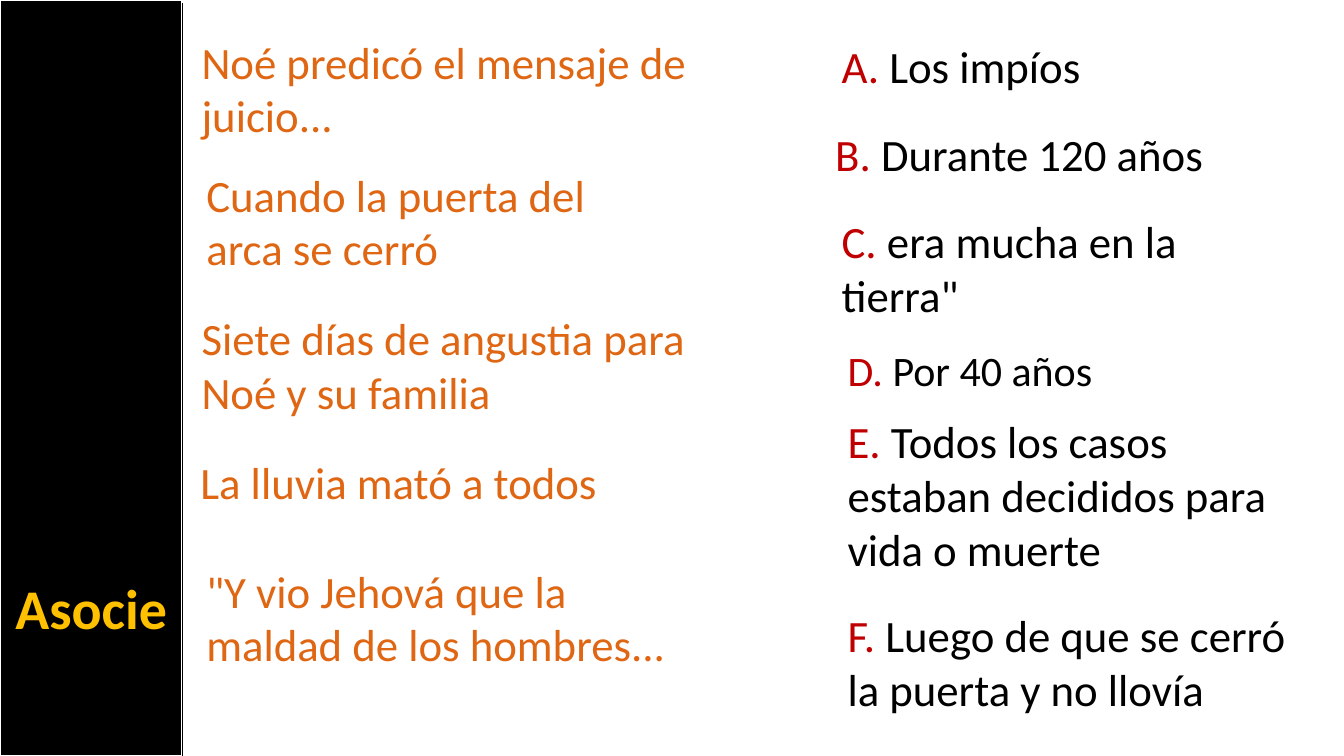
from pptx import Presentation, util as u
from pptx.dml.color import RGBColor
from pptx.enum import shapes, text
from pptx.oxml.ns import qn
from lxml import etree

BLACK = RGBColor(0x00, 0x00, 0x00)
WHITE = RGBColor(0xFF, 0xFF, 0xFF)
ORANGE = RGBColor(0xDF, 0x66, 0x13)
RED = RGBColor(0xC0, 0x00, 0x00)
GOLD = RGBColor(0xFF, 0xC0, 0x00)

# Content: left, top and width in cm, number of lines
TITLE = "Asocie"
STATEMENTS = [
    ("Noé predicó el mensaje de juicio...", 4.83, 0.74, 15.6, 2),
    ("Cuando la puerta del arca se cerró", 4.95, 4.09, 11.73, 2),
    ("Siete días de angustia para Noé y su familia", 4.83, 7.7, 12.9, 2),
    ("La lluvia mató a todos", 4.8, 11.33, 11.15, 1),
    ('"Y vio Jehová que la maldad de los hombres...', 4.95, 14.07, 12.9, 2),
]
# The same, with the letter first and the text size last
ANSWERS = [
    ("A. ", "Los impíos", 20.96, 0.84, 9.7, 1, 32),
    ("B. ", "Durante 120 años", 20.8, 3.07, 10.44, 1, 32),
    ("C. ", 'era mucha en la tierra"', 20.96, 5.26, 10.87, 2, 32),
    ("D. ", "Por 40 años", 21.11, 8.56, 10.59, 1, 30),
    ("E. ", "Todos los casos estaban decididos para vida o muerte", 21.11, 10.31, 12.07, 3, 32),
    ("F. ", "Luego de que se cerró la puerta y no llovía", 21.11, 15.19, 11.63, 2, 32),
]
SLIDE_WIDTH, SLIDE_HEIGHT = 33.87, 19.05
BAR_WIDTH = 4.6


def box_height(lines, size):
    """Height in cm of a box that fits its lines and its margins."""
    return lines * size * 0.043 + 0.25


def place(shape, left, top, width, height):
    shape.left, shape.top = u.Cm(left), u.Cm(top)
    shape.width, shape.height = u.Cm(width), u.Cm(height)


def write(shape, content, *, color, size=32, bold=False, align=text.PP_ALIGN.LEFT):
    """Add a run to the first paragraph of a shape."""
    frame = shape.text_frame
    frame.word_wrap = True
    frame.auto_size = text.MSO_AUTO_SIZE.SHAPE_TO_FIT_TEXT
    frame.vertical_anchor = text.MSO_ANCHOR.TOP
    paragraph = frame.paragraphs[0]
    paragraph.alignment = align
    run = paragraph.add_run()
    run.text = content
    run.font.name, run.font.size, run.font.bold = "Calibri", u.Pt(size), bold
    run.font.color.rgb = color


def add_box(slide, left, top, width, lines, size=32):
    box = slide.shapes.add_textbox(0, 0, 0, 0)
    place(box, left, top, width, box_height(lines, size))
    return box


def main():
    presentation = Presentation()
    presentation.slide_width = u.Cm(SLIDE_WIDTH)
    presentation.slide_height = u.Cm(SLIDE_HEIGHT)
    slide = presentation.slides.add_slide(presentation.slide_layouts[5])

    # Title on the black side bar
    title = slide.shapes.title
    place(title, 0, 14.33, BAR_WIDTH, box_height(1, 40))
    write(title, TITLE, color=GOLD, size=40, bold=True, align=text.PP_ALIGN.CENTER)
    bar = slide.shapes.add_shape(
        shapes.MSO_SHAPE.RECTANGLE, 0, 0, u.Cm(BAR_WIDTH), u.Cm(SLIDE_HEIGHT))
    bar.shadow.inherit = False
    bar.fill.solid()
    bar.fill.fore_color.rgb = BLACK
    bar.line.color.rgb = WHITE
    bar.line.width = u.Pt(1.5)
    title.element.addprevious(bar.element)

    # Statements
    for statement, left, top, width, lines in STATEMENTS:
        write(add_box(slide, left, top, width, lines), statement, color=ORANGE)

    # Lettered answers
    for letter, answer, left, top, width, lines, size in ANSWERS:
        box = add_box(slide, left, top, width, lines, size)
        write(box, letter, color=RED, size=size)
        write(box, answer, color=BLACK, size=size)

    # Edge of the side bar
    edge = slide.shapes.add_connector(
        shapes.MSO_CONNECTOR.STRAIGHT,
        u.Cm(BAR_WIDTH), u.Cm(0.08), u.Cm(BAR_WIDTH), u.Cm(SLIDE_HEIGHT))
    edge.line.color.rgb = BLACK
    edge.line.width = u.Pt(1)
    etree.SubElement(edge.element.spPr, qn("a:effectLst"))

    presentation.save("out.pptx")


if __name__ == "__main__":
    main()
